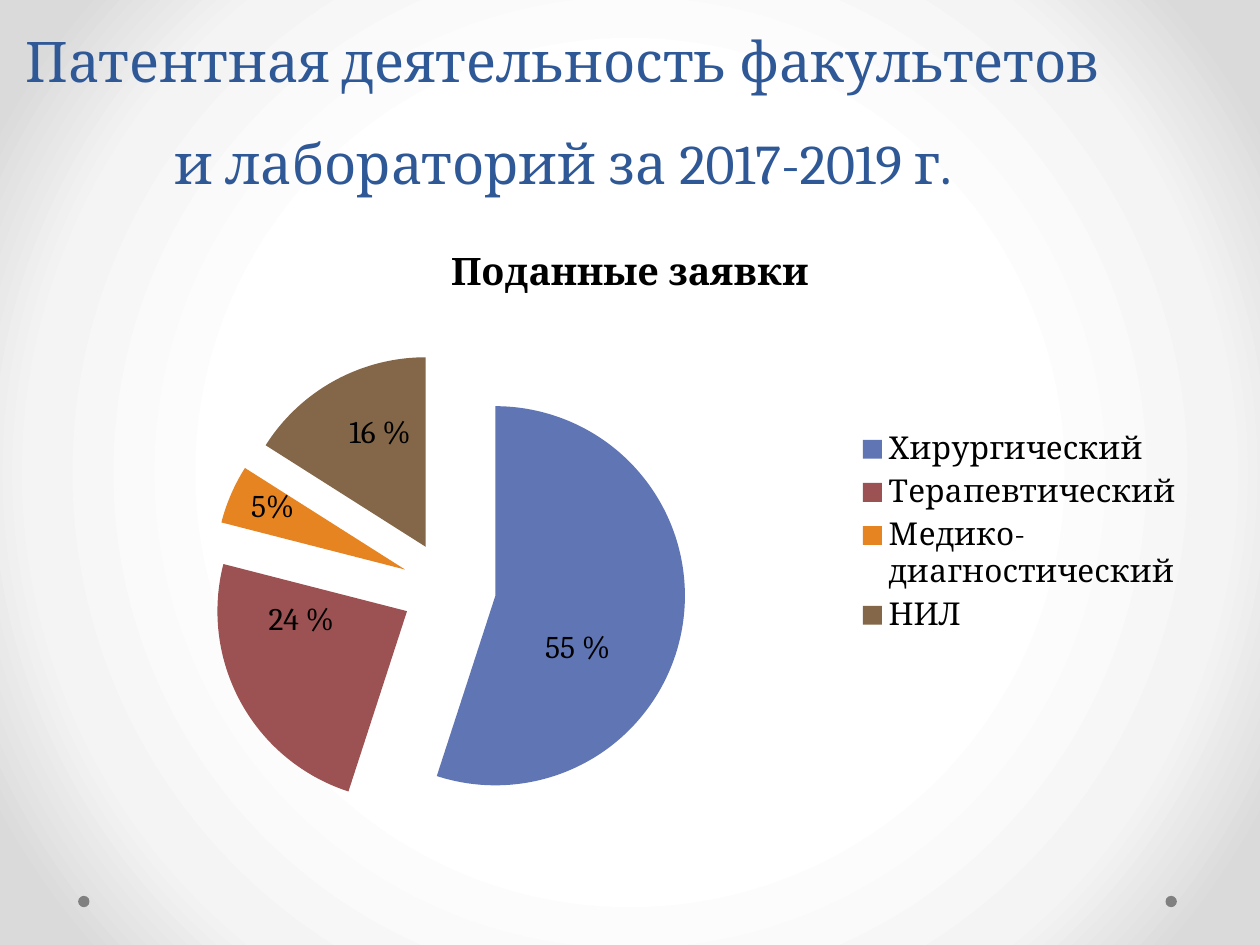
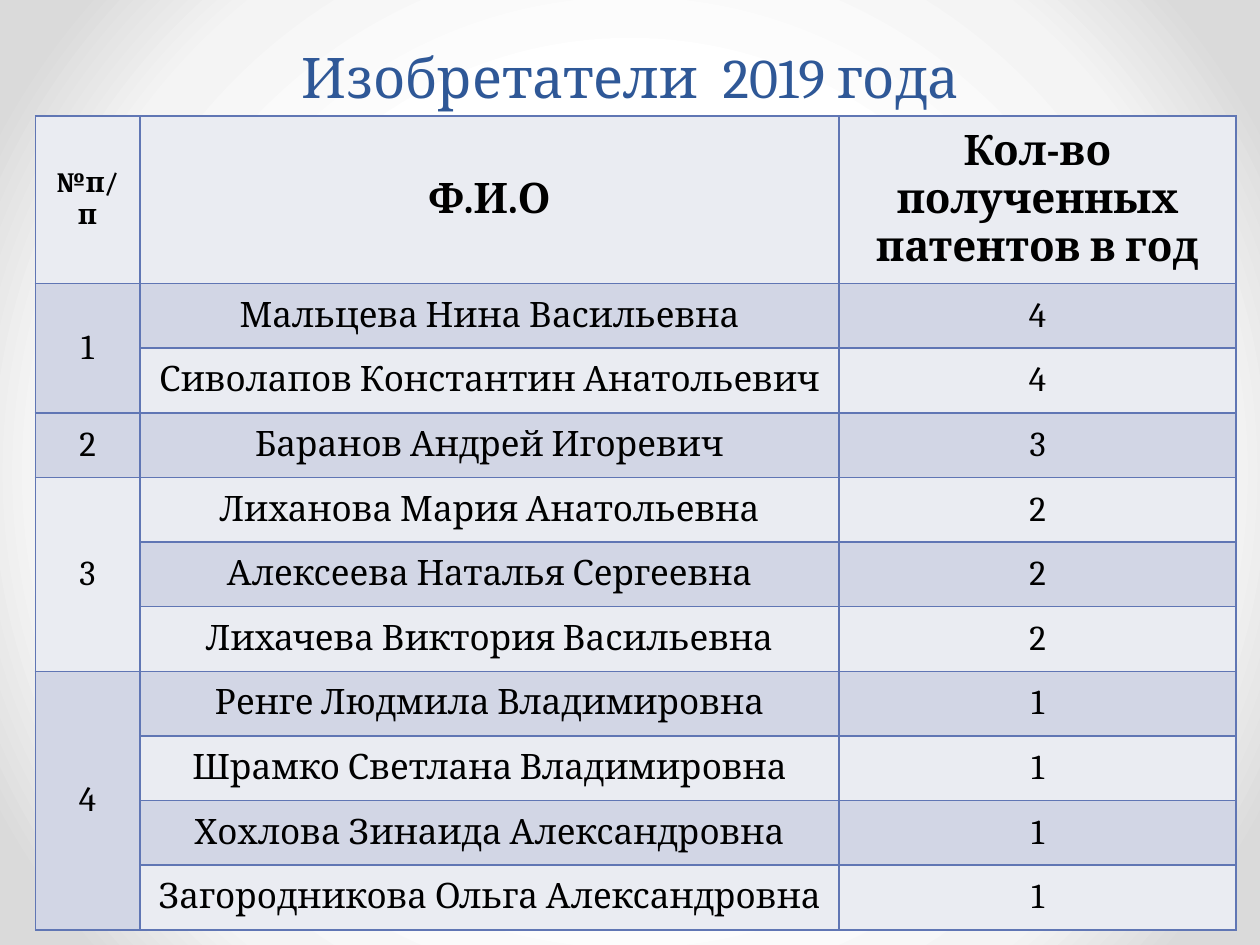
import pptx
import pptx.chart.data
import pptx.dml.color
import pptx.enum.chart
import pptx.enum.shapes
import pptx.enum.text
import pptx.oxml
import pptx.oxml.ns
import pptx.util

RGB = pptx.dml.color.RGBColor
Pt = pptx.util.Pt
Align = pptx.enum.text.PP_ALIGN
Anchor = pptx.enum.text.MSO_ANCHOR
qn = pptx.oxml.ns.qn

TITLE_BLUE = RGB(0x2F, 0x58, 0x97)
BLACK = RGB(0, 0, 0)
DOT_GRAY = RGB(0x80, 0x80, 0x80)
BLUE = RGB(0x60, 0x76, 0xB4)
RED = RGB(0x9C, 0x52, 0x52)
ORANGE = RGB(0xE6, 0x84, 0x22)
BROWN = RGB(0x84, 0x66, 0x48)
BAND_LIGHT = RGB(0xEA, 0xEC, 0xF2)
BAND_DARK = RGB(0xD2, 0xD6, 0xE5)
BACKGROUND_STOPS = [
    (50, RGB(0xFF, 0xFF, 0xFF)),
    (76, RGB(0xF4, 0xF4, 0xF4)),
    (92, RGB(0xDA, 0xDA, 0xDA)),
]
FONT = "Cambria"
COLUMNS, ROWS = 100, 75

# faculty, percent, label, colour, label shift as shares of the chart
APPLICATIONS = [
    ("Хирургический", 55, "55 %", BLUE, (-0.01, 0.06)),
    ("Терапевтический", 24, "24 %", RED, (-0.02, -0.06)),
    ("Медико-диагностический", 5, "5%", ORANGE, (-0.04, -0.04)),
    ("НИЛ", 16, "16 %", BROWN, (0, -0.05)),
]
HEADINGS = [("№п/п", 16), ("Ф.И.О", 24), ("Кол-во полученных патентов в год", 24)]
# inventors who share a rank, with the patents each received
INVENTORS = [
    (4, ["Мальцева Нина Васильевна", "Сиволапов Константин Анатольевич"]),
    (3, ["Баранов Андрей Игоревич"]),
    (2, ["Лиханова Мария Анатольевна", "Алексеева Наталья Сергеевна",
         "Лихачева Виктория Васильевна"]),
    (1, ["Ренге Людмила Владимировна", "Шрамко Светлана Владимировна",
         "Хохлова Зинаида Александровна", "Загородникова Ольга Александровна"]),
]


def make_element(xml):
    """Parse a fragment that uses the a: and c: prefixes."""
    head, mark, tail = xml.partition(">")
    slash = "/" if head.endswith("/") else ""
    head = head.removesuffix("/")
    return pptx.oxml.parse_xml(
        f"{head} {pptx.oxml.ns.nsdecls('a', 'c')}{slash}{mark}{tail}")


def style_font(font, size, color=BLACK, bold=False):
    font.name, font.size, font.bold = FONT, Pt(size), bold
    font.color.rgb = color


def manual_layout(**settings):
    values = "".join(f'<c:{name} val="{value}"/>' for name, value in settings.items())
    return make_element(f"<c:layout><c:manualLayout>{values}</c:manualLayout></c:layout>")


class Deck:
    def __init__(self):
        self.deck = pptx.Presentation()
        self.deck.slide_width = pptx.util.Inches(10)
        self.deck.slide_height = pptx.util.Inches(7.5)
        self.page = None

    def across(self, columns):
        return round(self.deck.slide_width * columns / COLUMNS)

    def down(self, rows):
        return round(self.deck.slide_height * rows / ROWS)

    def place(self, left, top, width, height):
        return self.across(left), self.down(top), self.across(width), self.down(height)

    def new_page(self):
        self.page = self.deck.slides.add_slide(self.deck.slide_layouts[6])
        self.paint_background()
        for left in (6.2, 92.5):
            self.dot(left, 71.1, 0.9)

    def paint_background(self):
        self.page.background.fill.gradient()
        gradient = next(self.page.element.iter(qn("a:gradFill")))
        stops = "".join(
            f'<a:gs pos="{share * 1000}"><a:srgbClr val="{color}"/></a:gs>'
            for share, color in BACKGROUND_STOPS)
        radial = make_element(
            f'<a:gradFill rotWithShape="1"><a:gsLst>{stops}</a:gsLst><a:path path="circle">'
            '<a:fillToRect l="50000" t="50000" r="50000" b="50000"/></a:path></a:gradFill>')
        gradient.getparent().replace(gradient, radial)

    def dot(self, left, top, size):
        dot = self.page.shapes.add_shape(
            pptx.enum.shapes.MSO_SHAPE.OVAL, *self.place(left, top, size, size))
        dot.shadow.inherit = False
        dot.fill.solid()
        dot.fill.fore_color.rgb = DOT_GRAY
        dot.line.fill.background()

    def title(self, text, *area):
        frame = self.page.shapes.add_textbox(*self.place(*area)).text_frame
        frame.word_wrap = True
        frame.vertical_anchor = Anchor.BOTTOM
        frame.text = text
        para = frame.paragraphs[0]
        para.alignment, para.line_spacing = Align.CENTER, Pt(58)
        style_font(para.runs[0].font, 32, TITLE_BLUE)

    def pie(self, title, slices, *area):
        data = pptx.chart.data.CategoryChartData()
        data.categories = [name for name, *_ in slices]
        data.add_series(title, [value for _, value, *_ in slices])
        chart = self.page.shapes.add_chart(
            pptx.enum.chart.XL_CHART_TYPE.PIE, *self.place(*area), data).chart
        style_font(chart.font, 18)
        chart.has_title = True
        chart.chart_title.text_frame.text = title
        style_font(chart.chart_title.text_frame.paragraphs[0].runs[0].font, 21.6, bold=True)
        chart.has_legend = True
        chart.legend.position = pptx.enum.chart.XL_LEGEND_POSITION.RIGHT
        chart.legend.include_in_layout = False
        style_font(chart.legend.font, 18)

        series = chart.plots[0].series[0]
        for index, (_, _, label, color, shift) in enumerate(slices):
            point = series.points[index]
            point.format.fill.solid()
            point.format.fill.fore_color.rgb = color
            self.slice_label(point.data_label, label, shift)
        series._element.find(qn("c:tx")).addnext(make_element('<c:explosion val="25"/>'))

        plot_area = next(chart.element.iter(qn("c:plotArea")))
        for layout in plot_area.findall(qn("c:layout")):
            plot_area.remove(layout)
        plot_area.insert(0, manual_layout(
            layoutTarget="inner", xMode="edge", yMode="edge", x=0.13, y=0.21, w=0.42, h=0.76))

    def slice_label(self, label, text, shift):
        label.text_frame.text = text
        style_font(label.text_frame.paragraphs[0].runs[0].font, 18)
        label.position = pptx.enum.chart.XL_LABEL_POSITION.CENTER
        element = label._get_or_add_dLbl()
        element.find(qn("c:idx")).addnext(manual_layout(x=shift[0], y=shift[1]))

    def table(self, widths, heights, left, top):
        frame = self.page.shapes.add_table(
            len(heights), len(widths), *self.place(left, top, sum(widths), sum(heights)))
        table = frame.table
        for column, width in zip(table.columns, widths):
            column.width = self.across(width)
        for row, height in zip(table.rows, heights):
            row.height = self.down(height)
        return table

    def cell(self, cell, text, size, fill, bold=False):
        properties = cell._tc.get_or_add_tcPr()
        for side in "LRTB":
            properties.append(make_element(
                f'<a:ln{side} w="12700"><a:solidFill><a:srgbClr val="{BLUE}"/>'
                f"</a:solidFill></a:ln{side}>"))
        cell.fill.solid()
        cell.fill.fore_color.rgb = fill
        cell.vertical_anchor = Anchor.MIDDLE
        cell.text = text
        para = cell.text_frame.paragraphs[0]
        para.alignment = Align.CENTER
        for span in para.runs:
            style_font(span.font, size, bold=bold)


def add_applications(deck):
    deck.new_page()
    deck.title("Патентная деятельность факультетов и лабораторий за 2017-2019 г.",
               0, 0, 89.4, 16)
    deck.pie("Поданные заявки", APPLICATIONS, 5, 17.5, 90, 49.5)


def add_inventors(deck):
    deck.new_page()
    deck.title("Изобретатели  2019 года", 2.8, 1.3, 94.5, 7.9)
    people = sum(len(names) for _, names in INVENTORS)
    table = deck.table([8.3, 55.5, 31.5], [13.3] + [5.13] * people, 2.8, 9.2)
    for column, (heading, size) in enumerate(HEADINGS):
        deck.cell(table.cell(0, column), heading, size, BAND_LIGHT, bold=True)
    row = 1
    for rank, (patents, names) in enumerate(INVENTORS, 1):
        first = row
        for name in names:
            fill = BAND_DARK if row % 2 else BAND_LIGHT
            rank_text = str(rank) if row == first else ""
            for column, text in enumerate((rank_text, name, str(patents))):
                deck.cell(table.cell(row, column), text, 20, fill)
            row += 1
        if len(names) > 1:
            table.cell(first, 0).merge(table.cell(row - 1, 0))


def main():
    deck = Deck()
    add_applications(deck)
    add_inventors(deck)
    deck.deck.save("out.pptx")


if __name__ == "__main__":
    main()
